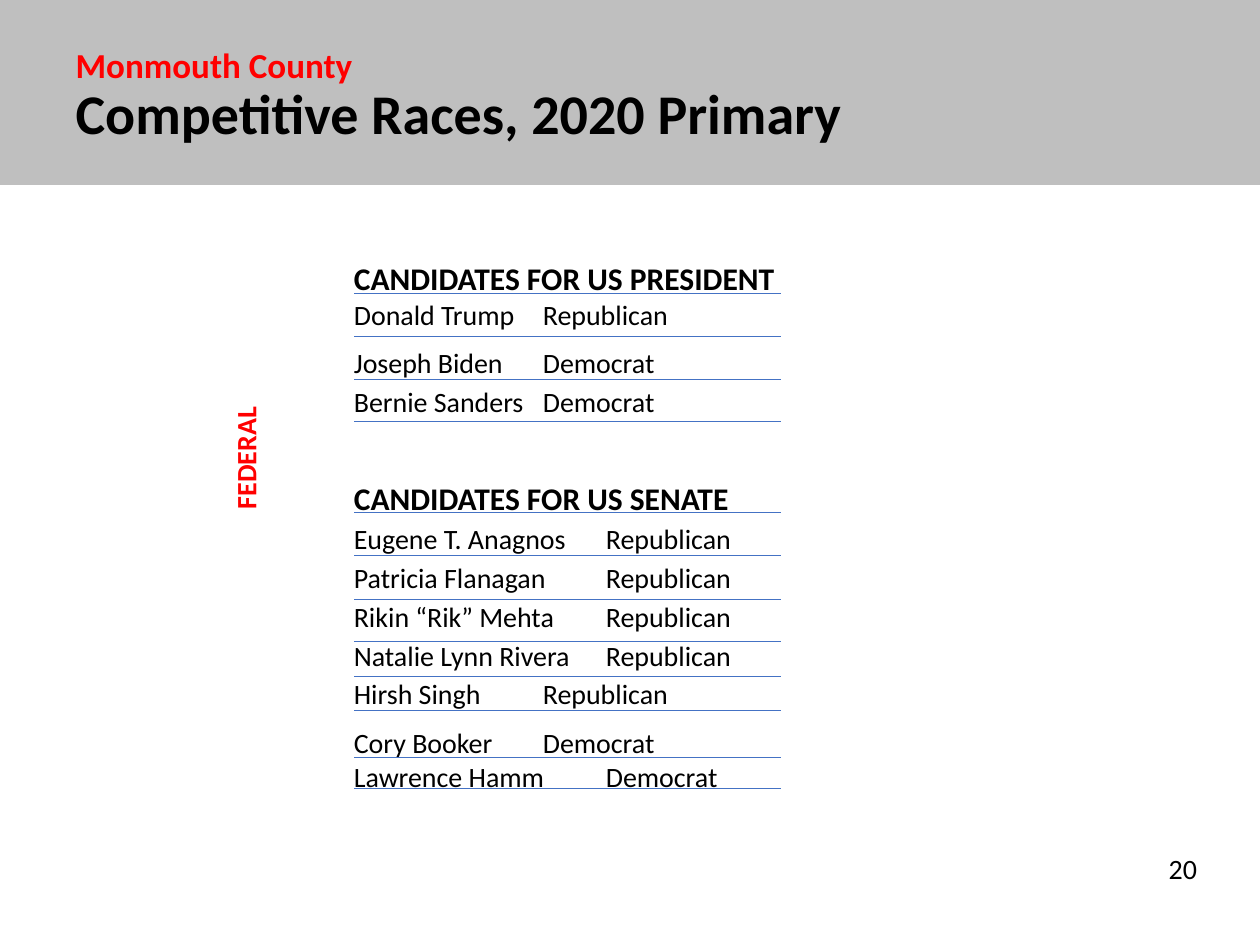
"""Build the slide of competitive federal races in Monmouth County."""
from dataclasses import dataclass

from lxml.etree import SubElement
from pptx import Presentation
from pptx.dml.color import RGBColor as Rgb
from pptx.enum.shapes import MSO_CONNECTOR as Connector, MSO_SHAPE as Shape
from pptx.enum.text import MSO_ANCHOR as Anchor, MSO_AUTO_SIZE as Fit, PP_ALIGN as Align
from pptx.oxml.ns import qn
from pptx.util import Cm, Pt


@dataclass(frozen=True)
class Theme:
    font: str = "Calibri"
    ink: Rgb = Rgb(0, 0, 0)
    accent: Rgb = Rgb(0xFF, 0, 0)
    band: Rgb = Rgb(0xBF, 0xBF, 0xBF)
    rule: Rgb = Rgb(0x44, 0x72, 0xC4)
    title: Pt = Pt(32)
    kicker: Pt = Pt(20)
    heading: Pt = Pt(18)
    body: Pt = Pt(16)


THEME = Theme()


def add_span(para, text, size, color=THEME.ink, bold=False):
    span = para.add_run()
    span.text = text
    style = {"name": THEME.font, "size": size, "bold": bold}
    for key, value in style.items():
        setattr(span.font, key, value)
    span.font.color.rgb = color


def place(box, left, top, width, height, anchor=Anchor.TOP):
    spot = {"left": left, "top": top, "width": width, "height": height}
    for key, value in spot.items():
        setattr(box, key, Cm(value))
    layout = {"word_wrap": True, "auto_size": Fit.NONE, "vertical_anchor": anchor}
    for key, value in layout.items():
        setattr(box.text_frame, key, value)
    return box.text_frame.paragraphs[0]


deck = Presentation()
deck.slide_width, deck.slide_height = Cm(25.4), Cm(19.05)
page = deck.slides.add_slide(deck.slide_layouts.get_by_name("Two Content"))
title, president_box, senate_box = page.placeholders

band = page.shapes.add_shape(Shape.RECTANGLE, 0, 0, deck.slide_width, Cm(3.73))
band.shadow.inherit = False
band.fill.solid()
band.fill.fore_color.rgb = THEME.band
band.line.fill.background()
page.shapes._spTree.insert(2, band._element)

para = place(title, 1.27, 0.51, 17.35, 2.92, Anchor.MIDDLE)
para.alignment = Align.LEFT
para.line_spacing = 0.9
add_span(para, "Monmouth County", THEME.kicker, THEME.accent, True)
para.add_line_break()
add_span(para, "Competitive Races, 2020 Primary", THEME.title, bold=True)

number = page.shapes.add_textbox(0, 0, 0, 0)
para = place(number, 20.09, 17.04, 4.29, 0.94)
para.alignment = Align.RIGHT
add_span(para, "20", THEME.body)

level = page.shapes.add_textbox(0, 0, 0, 0)
para = place(level, 1.9, 8.76, 6.1, 0.94)
para.alignment = Align.CENTER
level.rotation = 270
add_span(para, "FEDERAL", THEME.body, THEME.accent, True)

president = [
    ("Donald Trump", "Republican", 0, 0.86),
    ("Joseph Biden", "Democrat", 8.5, 0.86),
    ("Bernie Sanders", "Democrat", 3, 0.86),
]
senate = [
    ("Eugene T. Anagnos", "Republican", 3, 0.86),
    ("Patricia Flanagan", "Republican", 3, 0.88),
    ("Rikin “Rik” Mehta", "Republican", 3, 0.86),
    ("Natalie Lynn Rivera", "Republican", 3, 0.69),
    ("Hirsh Singh", "Republican", 3, 0.69),
    ("Cory Booker", "Democrat", 8.5, 0.96),
    ("Lawrence Hamm", "Democrat", 0, 0.61),
]
races = [
    (president_box, "CANDIDATES FOR US PRESIDENT", president, 5.1, 11.73, 3.48),
    (senate_box, "CANDIDATES FOR US SENATE", senate, 9.52, 10.87, 6.65),
]
for box, heading, candidates, top, width, height in races:
    para = place(box, 6.88, top, width, height)
    add_span(para, heading, THEME.heading, bold=True)
    rule_y = top + 0.82
    rules = [rule_y]
    for name, party, space, step in candidates:
        para = box.text_frame.add_paragraph()
        para.space_before = Pt(space)
        add_span(para, f"{name}\t{party}", THEME.body)
        rule_y += step
        rules.append(rule_y)

    for para in box.text_frame.paragraphs:
        para.space_before = para.space_before or Pt(0)
        props = para._p.get_or_add_pPr()
        props.set("marL", "0")
        props.set("indent", "0")
        SubElement(props, qn("a:buNone"))
        tabs = SubElement(props, qn("a:tabLst"))
        SubElement(tabs, qn("a:tab"), pos=str(Cm(5.08)), algn="l")

    for y in rules:
        rule = page.shapes.add_connector(
            Connector.STRAIGHT, Cm(7.14), Cm(y), Cm(15.75), Cm(y))
        rule.line.color.rgb = THEME.rule
        rule.line.width = Pt(0.5)
        SubElement(rule._element.spPr, qn("a:effectLst"))

deck.save("out.pptx")
